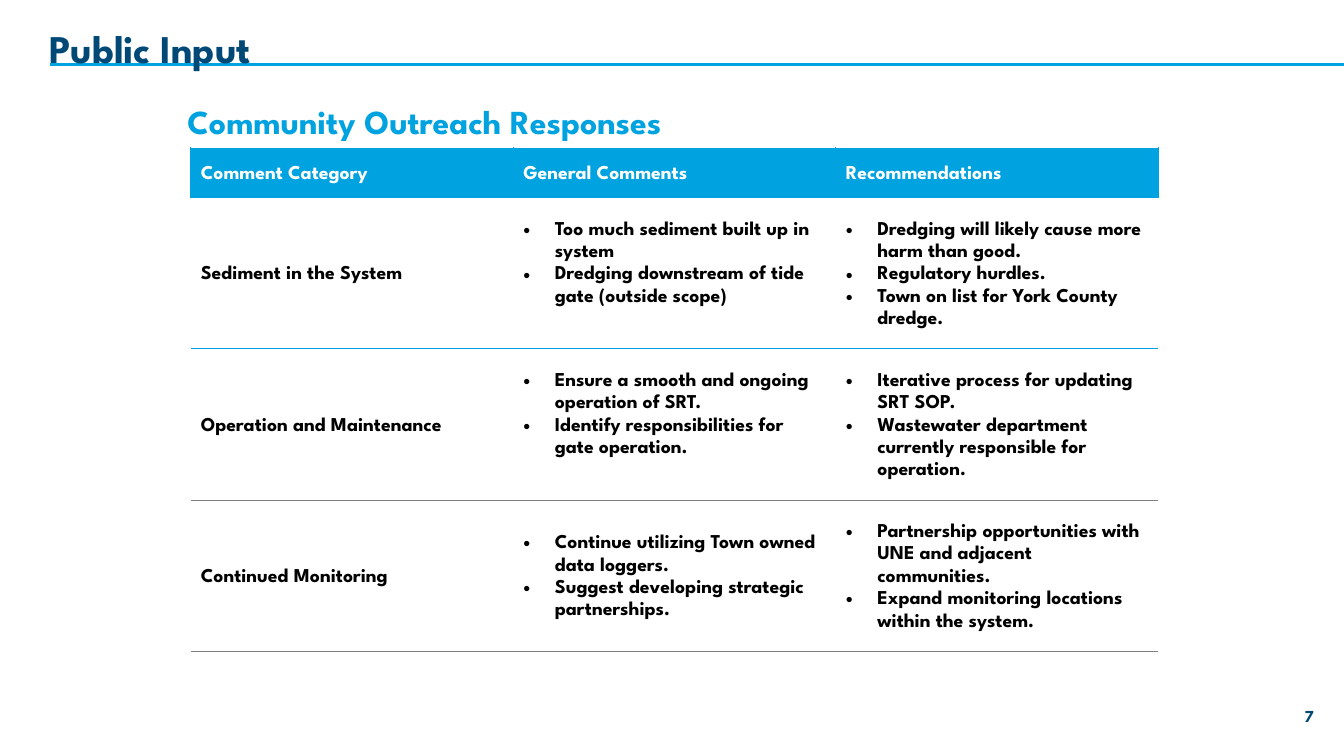
from dataclasses import dataclass

from lxml.etree import SubElement
from pptx import Presentation
from pptx.dml.color import RGBColor as RGB
from pptx.enum.shapes import MSO_CONNECTOR as CONN
from pptx.enum.text import MSO_ANCHOR as ANCHOR, PP_ALIGN as ALIGN
from pptx.oxml import parse_xml
from pptx.oxml.ns import nsdecls, qn
from pptx.util import Pt

TITLE = "Public Input"
SUBTITLE = "Community Outreach Responses"
PAGE = "7"
HEADERS = ("Comment Category", "General Comments", "Recommendations")
ROWS = [
    ("Sediment in the System",
     ["Too much sediment built up in system",
      "Dredging downstream of tide gate (outside scope)"],
     ["Dredging will likely cause more harm than good.",
      "Regulatory hurdles.",
      "Town on list for York County dredge."]),
    ("Operation and Maintenance",
     ["Ensure a smooth and ongoing operation of SRT.",
      "Identify responsibilities for gate operation."],
     ["Iterative process for updating SRT SOP.",
      "Wastewater department currently responsible for operation."]),
    ("Continued Monitoring",
     ["Continue utilizing Town owned data loggers.",
      "Suggest developing strategic partnerships."],
     ["Partnership opportunities with UNE and adjacent communities.",
      "Expand monitoring locations within the system."]),
]
RAISED_CELLS = {(1, 1), (2, 1)}  # text sits half a line above the middle


@dataclass(frozen=True)
class Theme:
    font: str = "League Spartan"
    navy: str = "004976"
    blue: str = "00A3E0"
    black: str = "000000"
    white: str = "FFFFFF"
    grey: str = "7F7F7F"
    title: int = 28
    subtitle: int = 24
    body: int = 14
    page: int = 12
    leading: int = 16


T = Theme()
SLIDE_W, SLIDE_H = 960, 540
RULE_X, RULE_Y = 36, 46.1
TABLE_X, TABLE_Y = 136.2, 105.1
COL_W, HEAD_H, ROW_H = 230.4, 36, 108
INDENT = 22.5
CELL_PAD = 3.6
NO_STYLE = "{2D5ABB26-0587-4C30-8999-92F81FD0307C}"


def add_run(p, text, size, color):
    r = p.add_run()
    r.text = text
    r.font.name = T.font
    r.font.size = Pt(size)
    r.font.bold = True
    r.font.color.rgb = RGB.from_string(color)


def add_text(s, box, text, size, color, anchor=ANCHOR.TOP, align=ALIGN.LEFT, spacing=None):
    tf = s.shapes.add_textbox(*map(Pt, box)).text_frame
    tf.word_wrap = True
    tf.vertical_anchor = anchor
    p = tf.paragraphs[0]
    p.alignment = align
    p.line_spacing = spacing
    add_run(p, text, size, color)


def add_rule(s):
    line = s.shapes.add_connector(CONN.STRAIGHT, Pt(RULE_X), Pt(RULE_Y), Pt(SLIDE_W), Pt(RULE_Y))
    line.line.color.rgb = RGB.from_string(T.blue)
    line.line.width = Pt(2.25)
    SubElement(line._element.spPr, qn("a:effectLst"))


def set_borders(cell, borders):
    """Take (side, colour, points) in the order L, R, T, B."""
    tc_pr = cell._tc.get_or_add_tcPr()
    for i, (side, color, width) in enumerate(borders):
        tc_pr.insert(i, parse_xml(
            f'<a:ln{side} {nsdecls("a")} w="{Pt(width)}"><a:solidFill>'
            f'<a:srgbClr val="{color}"/></a:solidFill></a:ln{side}>'))


def add_bullet(p):
    p_pr = p._p.get_or_add_pPr()
    p_pr.set("marL", str(Pt(INDENT)))
    p_pr.set("indent", str(-Pt(INDENT)))
    SubElement(p_pr, qn("a:buFont"), typeface="Arial")
    SubElement(p_pr, qn("a:buChar"), char="•")


def fill_cell(cell, content, color, fill, borders):
    cell.fill.solid()
    cell.fill.fore_color.rgb = RGB.from_string(fill)
    set_borders(cell, borders)
    cell.vertical_anchor = ANCHOR.MIDDLE
    bulleted = isinstance(content, list)
    tf = cell.text_frame
    for i, text in enumerate(content if bulleted else [content]):
        p = tf.add_paragraph() if i else tf.paragraphs[0]
        if bulleted:
            add_bullet(p)
        p.line_spacing = Pt(T.leading)
        add_run(p, text, T.body, color)


def add_responses(s):
    frame = s.shapes.add_table(len(ROWS) + 1, len(HEADERS), Pt(TABLE_X), Pt(TABLE_Y),
                               Pt(COL_W * len(HEADERS)), Pt(HEAD_H + ROW_H * len(ROWS)))
    table = frame.table
    table._tbl.tblPr.find(qn("a:tableStyleId")).text = NO_STYLE
    table.horz_banding = False
    for col in table.columns:
        col.width = Pt(COL_W)
    for i, row in enumerate(table.rows):
        row.height = Pt(ROW_H if i else HEAD_H)

    head_borders = [("L", T.blue, 0.5), ("R", T.blue, 0.5), ("T", T.white, 1)]
    for c, text in enumerate(HEADERS):
        fill_cell(table.cell(0, c), text, T.white, T.blue, head_borders)
    for i, row in enumerate(ROWS, 1):
        borders = [("B", T.blue if i == 1 else T.grey, 0.5)]
        for c, content in enumerate(row):
            cell = table.cell(i, c)
            fill_cell(cell, content, T.black, T.white, borders)
            if (i, c) in RAISED_CELLS:
                cell.margin_bottom = Pt(CELL_PAD + T.leading)


def main():
    prs = Presentation()
    prs.slide_width, prs.slide_height = Pt(SLIDE_W), Pt(SLIDE_H)
    s = prs.slides.add_slide(prs.slide_layouts[6])
    add_rule(s)
    add_text(s, (28.1, 15.1, 828, 39.6), TITLE, T.title, T.navy, ANCHOR.BOTTOM, spacing=0.9)
    add_text(s, (729.4, 501.1, 216, 20.9), PAGE, T.page, T.navy, ANCHOR.MIDDLE, ALIGN.RIGHT)
    add_responses(s)
    add_text(s, (126.7, 68.4, 620.6, 36), SUBTITLE, T.subtitle, T.blue)
    prs.save("out.pptx")


if __name__ == "__main__":
    main()
